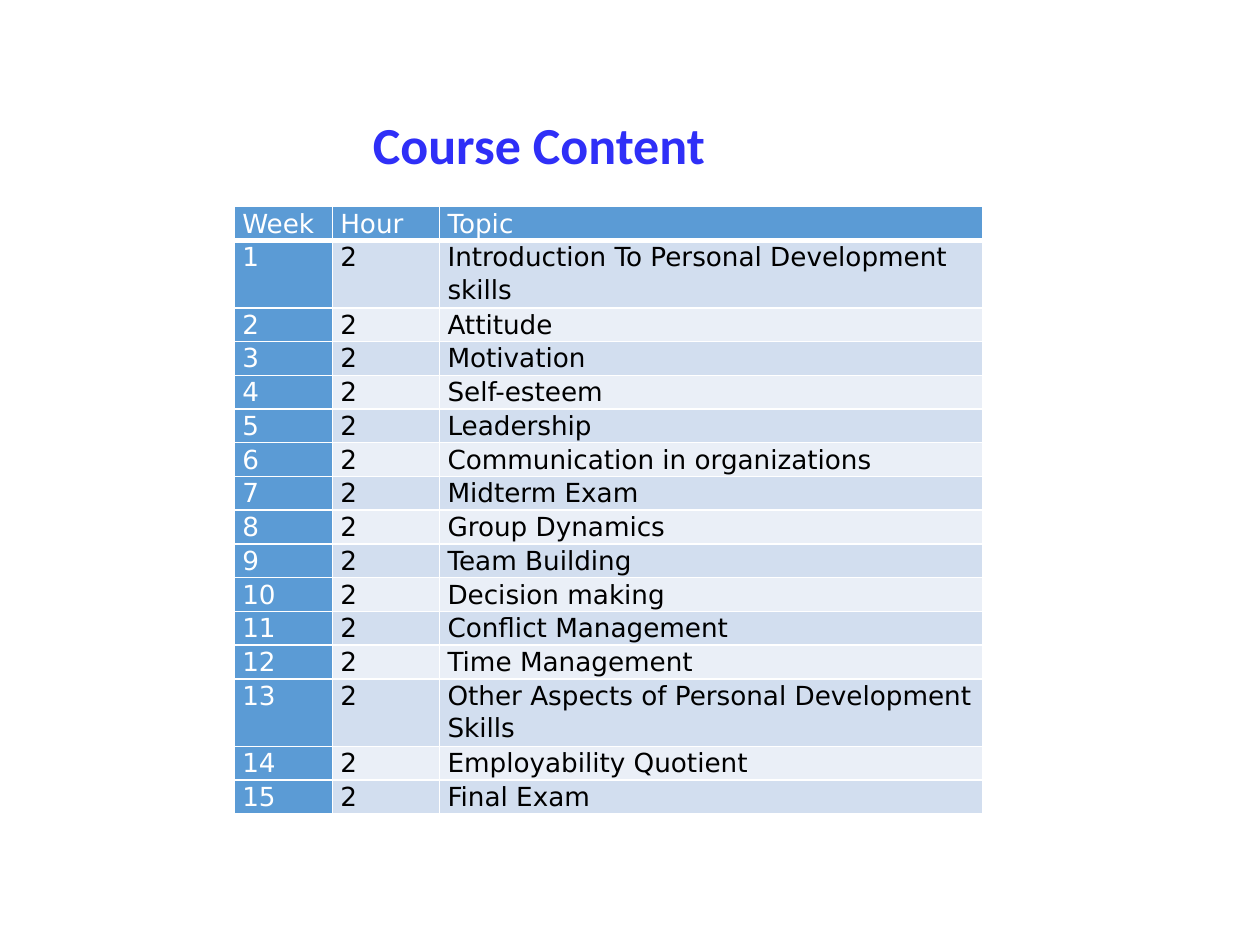
import dataclasses

import pptx
import pptx.dml.color
import pptx.enum.text
import pptx.oxml
import pptx.oxml.ns
import pptx.util

Pt = pptx.util.Pt

HUES = {
    "title": "2F2FF7",
    "head": "5B9BD5",
    "odd": "D2DEEF",
    "even": "EAEFF7",
    "light": "FFFFFF",
    "dark": "000000",
}
WIDTHS = (56, 61.3, 310.3)
ROW_TALL = 19.26
HOURS = "2"
TOPICS = (
    "Introduction To Personal Development skills",
    "Attitude",
    "Motivation",
    "Self-esteem",
    "Leadership",
    "Communication in organizations",
    "Midterm Exam",
    "Group Dynamics",
    "Team Building",
    "Decision making",
    "Conflict Management",
    "Time Management",
    "Other Aspects of Personal Development Skills",
    "Employability Quotient",
    "Final Exam",
)


@dataclasses.dataclass
class Entry:
    text: str
    fill: str
    ink: str
    base: float = 1  # width of the bottom border


def color(name: str) -> pptx.dml.color.RGBColor:
    return pptx.dml.color.RGBColor.from_string(HUES[name])


def style(para, face: str, size: float, ink: str, lead: float) -> None:
    para.line_spacing = lead
    para.font.name = face
    para.font.size = Pt(size)
    para.font.color.rgb = color(ink)


def add_edges(cell, base: float) -> None:
    props = cell._tc.get_or_add_tcPr()
    edges = (("lnL", 1), ("lnR", 1), ("lnT", 1), ("lnB", base))
    for place, (tag, width) in enumerate(edges):
        edge = pptx.oxml.parse_xml(
            f'<a:{tag} {pptx.oxml.ns.nsdecls("a")} w="{Pt(width)}">'
            f'<a:solidFill><a:srgbClr val="{HUES["light"]}"/></a:solidFill>'
            f"</a:{tag}>"
        )
        props.insert(place, edge)


def draw_cell(cell, entry: Entry) -> None:
    cell.text = entry.text
    cell.margin_left = cell.margin_right = Pt(4.5)
    cell.margin_top = cell.margin_bottom = Pt(0)
    cell.fill.solid()
    cell.fill.fore_color.rgb = color(entry.fill)
    style(cell.text_frame.paragraphs[0], "DejaVu Sans", 15, entry.ink, 1.07)
    add_edges(cell, entry.base)


def week_row(week: int, topic: str) -> list[Entry]:
    band = "odd" if week % 2 else "even"
    return [
        Entry(str(week), "head", "light"),
        Entry(HOURS, band, "dark"),
        Entry(topic, band, "dark"),
    ]


def draw_title(slide) -> None:
    box = slide.shapes.add_textbox(Pt(206), Pt(77), Pt(620.6), Pt(15.1))
    frame = box.text_frame
    frame.word_wrap = True
    frame.vertical_anchor = pptx.enum.text.MSO_ANCHOR.MIDDLE
    para = frame.paragraphs[0]
    para.text = "Course Content"
    style(para, "Calibri", 29.7, "title", 0.9)
    para.font.bold = True


def draw_table(slide) -> None:
    rows = [[Entry(text, "head", "light", 3) for text in ("Week", "Hour", "Topic")]]
    rows += [week_row(week, topic) for week, topic in enumerate(TOPICS, 1)]
    table = slide.shapes.add_table(
        len(rows), len(WIDTHS), Pt(134), Pt(118.1),
        Pt(sum(WIDTHS)), Pt(ROW_TALL * len(rows)),
    ).table
    for column, width in zip(table.columns, WIDTHS):
        column.width = Pt(width)
    for line, entries in zip(table.rows, rows):
        line.height = Pt(ROW_TALL)
        for cell, entry in zip(line.cells, entries):
            draw_cell(cell, entry)


def main() -> None:
    deck = pptx.Presentation()
    deck.slide_width, deck.slide_height = Pt(720), Pt(540)
    slide = deck.slides.add_slide(deck.slide_layouts[6])

    # Heading
    draw_title(slide)

    # Weekly plan
    draw_table(slide)

    deck.save("out.pptx")


if __name__ == "__main__":
    main()
